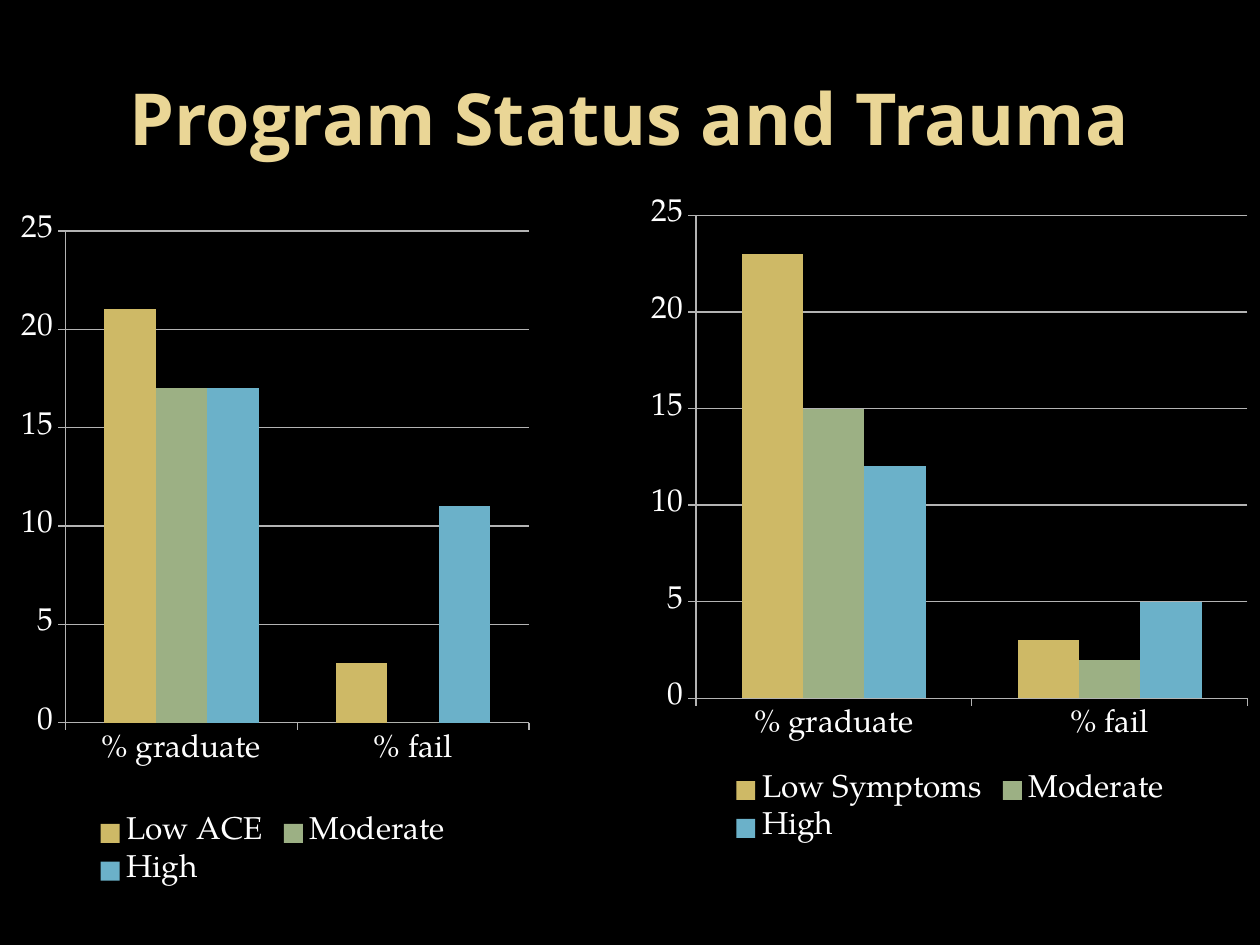
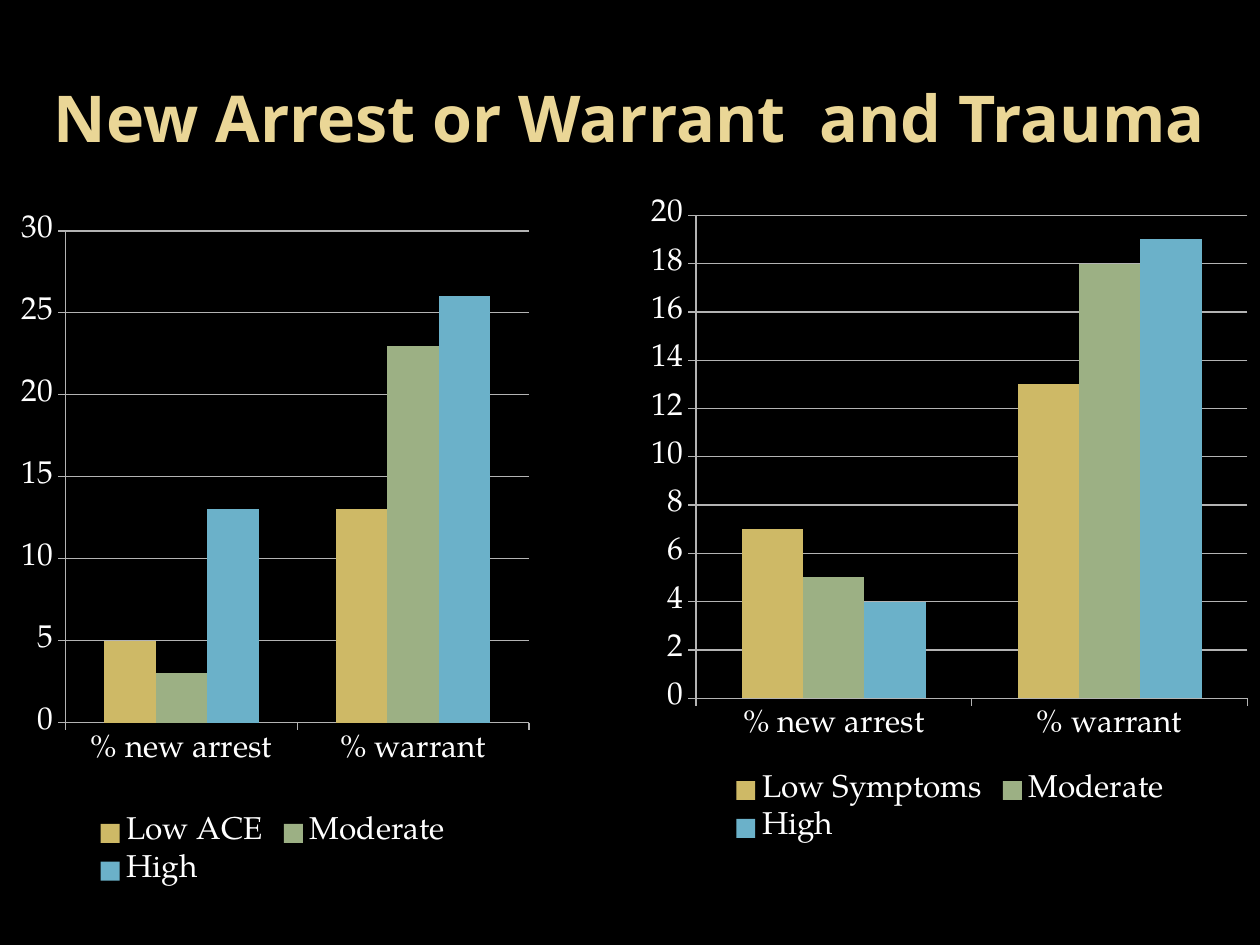
from pptx import Presentation
from pptx.chart.data import CategoryChartData
from pptx.dml.color import RGBColor
from pptx.enum import chart as ch, text
from pptx.oxml import parse_xml
from pptx.oxml.ns import nsdecls
from pptx.util import Inches, Pt

BACKGROUND, TITLE, CHART_TEXT, GRID = "000000", "EAD696", "FFFFFF", "B3B3B3"
SERIES_COLOURS = ["CEB966", "9CB084", "6BB1C9"]
TITLE_FONT, CHART_FONT = "Open Sans", "TeX Gyre Pagella"
TITLE_TOP, TITLE_HEIGHT = 0.3, 1.25

# Chart boxes in inches; plot areas as fractions of their chart box
ACE_BOX, ACE_PLOT = (0, 1.67, 4.33, 5.42), (0.12, 0.03, 0.85, 0.72)
SYMPTOMS_BOX, SYMPTOMS_PLOT = (5.08, 1.5, 4.92, 5.25), (0.09, 0.04, 0.89, 0.73)


def rgb(colour):
    return RGBColor.from_string(colour)


def style_font(font, **values):
    for name, value in values.items():
        if name == "color":
            font.color.rgb = rgb(value)
        else:
            setattr(font, name, value)


def style_line(line):
    line.color.rgb = rgb(GRID)
    line.width = Pt(0.75)


def add_title(s, wording, left, width, size):
    title = s.shapes.title
    box = dict(left=left, top=TITLE_TOP, width=width, height=TITLE_HEIGHT)
    for name, value in box.items():
        setattr(title, name, Inches(value))
    tf = title.text_frame
    tf.word_wrap = True
    tf.vertical_anchor = text.MSO_ANCHOR.MIDDLE
    p = tf.paragraphs[0]
    p.alignment = text.PP_ALIGN.CENTER
    r = p.add_run()
    r.text = wording
    style_font(r.font, name=TITLE_FONT, size=Pt(size), bold=True, color=TITLE)


def set_plot_layout(chart, plot):
    """Fix the inner plot area at x, y, w, h fractions of the chart."""
    plot_area = chart.plots[0]._element.getparent()
    for old in plot_area.xpath("c:layout"):
        plot_area.remove(old)
    sizes = "".join(f'<c:{k} val="{v}"/>' for k, v in zip("xywh", plot))
    plot_area.insert(0, parse_xml(
        f'<c:layout {nsdecls("c")}><c:manualLayout><c:layoutTarget val="inner"/>'
        f'<c:xMode val="edge"/><c:yMode val="edge"/>{sizes}'
        "</c:manualLayout></c:layout>"))


def add_column_chart(s, box, plot, categories, series, top_value, step):
    data = CategoryChartData(number_format="General")
    data.categories = categories
    for name, values in series.items():
        data.add_series(name, values)
    chart = s.shapes.add_chart(ch.XL_CHART_TYPE.COLUMN_CLUSTERED,
                               *map(Inches, box), data).chart
    style_font(chart.font, name=CHART_FONT, size=Pt(18), color=CHART_TEXT)
    chart.has_title = False
    chart.has_legend = True
    chart.legend.position = ch.XL_LEGEND_POSITION.BOTTOM
    chart.legend.include_in_layout = False

    columns = chart.plots[0]
    columns.gap_width = 150
    columns.overlap = 0
    columns.vary_by_categories = False
    for column, colour in zip(columns.series, SERIES_COLOURS):
        column.format.fill.solid()
        column.format.fill.fore_color.rgb = rgb(colour)

    value_axis = chart.value_axis
    scale = dict(minimum_scale=0, maximum_scale=top_value, major_unit=step,
                 has_major_gridlines=True)
    for name, value in scale.items():
        setattr(value_axis, name, value)
    style_line(value_axis.major_gridlines.format.line)
    for axis in (chart.category_axis, value_axis):
        axis.major_tick_mark = ch.XL_TICK_MARK.OUTSIDE
        style_line(axis.format.line)
    set_plot_layout(chart, plot)


def add_trauma_slide(prs, title, categories, ace, symptoms):
    """Title above two charts: ACE score at left, symptoms at right."""
    s = prs.slides.add_slide(prs.slide_layouts[5])
    add_title(s, **title)
    add_column_chart(s, ACE_BOX, ACE_PLOT, categories, **ace)
    add_column_chart(s, SYMPTOMS_BOX, SYMPTOMS_PLOT, categories, **symptoms)


def levels(low_name, low, moderate, high):
    return {low_name: low, "Moderate": moderate, "High": high}


def main():
    prs = Presentation()
    prs.slide_width, prs.slide_height = Inches(10), Inches(7.5)
    fill = prs.slide_master.background.fill
    fill.solid()
    fill.fore_color.rgb = rgb(BACKGROUND)

    add_trauma_slide(
        prs,
        dict(wording="Program Status and Trauma", left=0.5, width=9, size=41),
        ["% graduate", "% fail"],
        dict(series=levels("Low ACE", (21, 3), (17, 0), (17, 11)),
             top_value=25, step=5),
        dict(series=levels("Low Symptoms", (23, 3), (15, 2), (12, 5)),
             top_value=25, step=5))
    add_trauma_slide(
        prs,
        dict(wording="New Arrest or Warrant  and Trauma", left=0, width=10,
             size=36.9),
        ["% new arrest", "% warrant"],
        dict(series=levels("Low ACE", (5, 13), (3, 23), (13, 26)),
             top_value=30, step=5),
        dict(series=levels("Low Symptoms", (7, 13), (5, 18), (4, 19)),
             top_value=20, step=2))
    prs.save("out.pptx")


if __name__ == "__main__":
    main()
